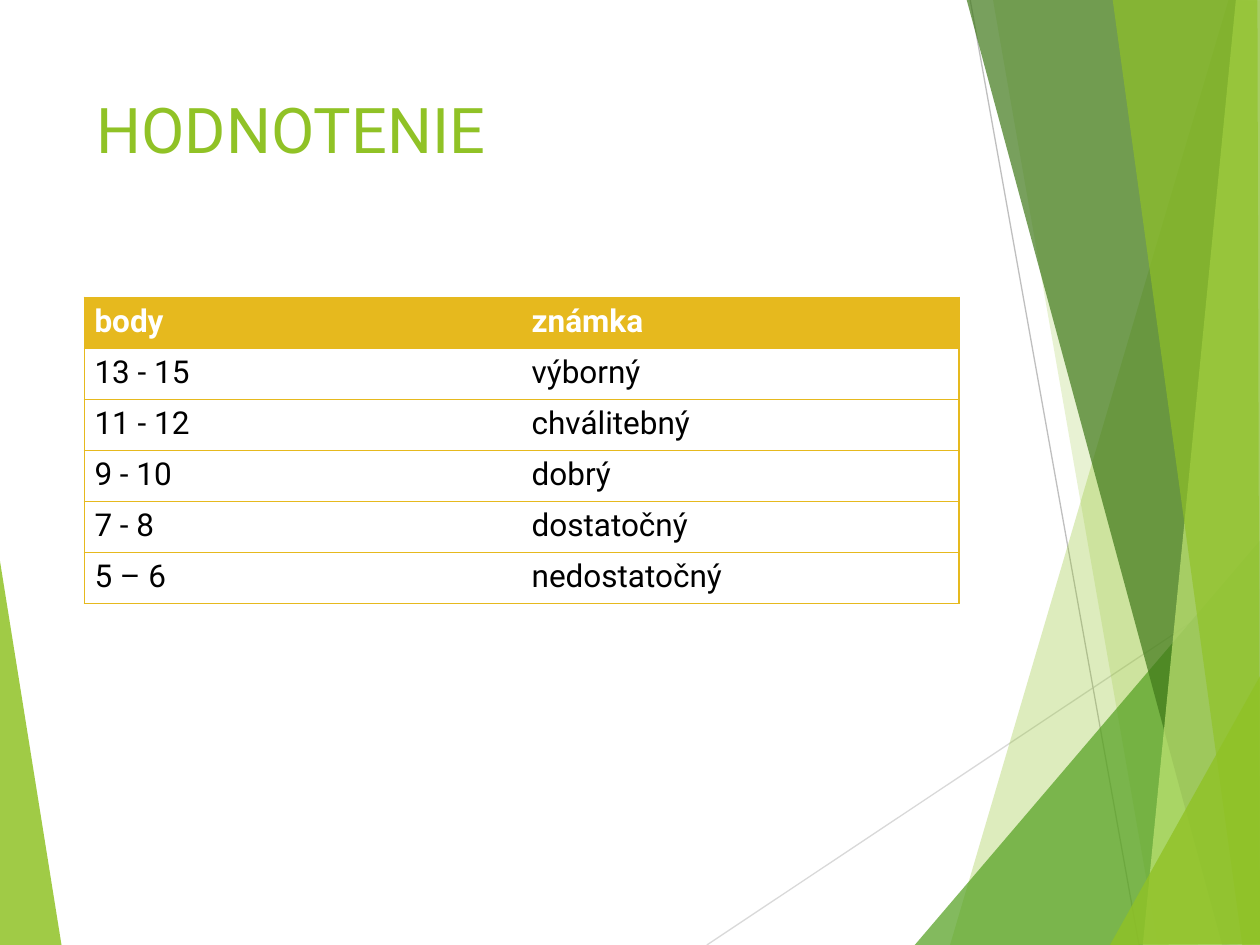
from lxml import etree
from pptx import Presentation
from pptx.dml.color import RGBColor
from pptx.enum import shapes, text
from pptx.oxml import ns
from pptx.util import Inches, Pt

LIME = RGBColor(0x90, 0xC2, 0x26)
GREEN = RGBColor(0x54, 0xA0, 0x21)
DARK = RGBColor(0x3F, 0x78, 0x19)
PALE = RGBColor(0xC0, 0xE4, 0x74)
GOLD = RGBColor(0xE6, 0xB9, 0x1E)
SILVER = RGBColor(0xD9, 0xD9, 0xD9)
GRAY = RGBColor(0xBF, 0xBF, 0xBF)
WHITE = RGBColor(0xFF, 0xFF, 0xFF)
BLACK = RGBColor(0, 0, 0)
FONT = "Roboto"


def add_facet(points, color, alpha):
    """Draw a borderless polygon; alpha is its opacity in percent."""
    start, *rest = [(Inches(x), Inches(y)) for x, y in points]
    pen = slide.shapes.build_freeform(*start, scale=1.0)
    pen.add_line_segments(rest, close=True)
    facet = pen.convert_to_shape()
    facet.shadow.inherit = False
    facet.line.fill.background()
    facet.fill.solid()
    facet.fill.fore_color.rgb = color
    tint = facet.fill._xPr.find(".//" + ns.qn("a:srgbClr"))
    etree.SubElement(tint, ns.qn("a:alpha"), val=str(alpha * 1000))


def set_borders(cell, sides):
    """Rule the named sides (of L, R, T, B) in gold and clear the others."""
    props = cell._tc.get_or_add_tcPr()
    for spot, side in enumerate("LRTB"):
        edge = etree.Element(ns.qn("a:ln" + side), w=str(Pt(1)))
        if side in sides:
            fill = etree.SubElement(edge, ns.qn("a:solidFill"))
            etree.SubElement(fill, ns.qn("a:srgbClr"), val=str(GOLD))
        else:
            etree.SubElement(edge, ns.qn("a:noFill"))
        props.insert(spot, edge)


deck = Presentation()
deck.slide_width, deck.slide_height = Inches(10), Inches(7.5)
slide = deck.slides.add_slide(deck.slide_layouts[6])

# Background facets and thin lines
add_facet([(-0.01, 4.39), (0.49, 7.51), (-0.01, 7.5)], LIME, 85)

for x1, y1, x2, y2, color in [
    (5.61, 7.5, 10.01, 4.57, SILVER),
    (7.7, 0, 9.04, 7.5, GRAY),
]:
    line = slide.shapes.add_connector(
        shapes.MSO_CONNECTOR.STRAIGHT, Inches(x1), Inches(y1), Inches(x2), Inches(y2))
    line.line.color.rgb = color
    line.line.width = Pt(0.75)
    etree.SubElement(line._element.spPr, ns.qn("a:effectLst"))

for points, color, alpha in [
    ([(9.75, 0), (7.54, 7.5), (10.02, 7.51), (10.01, 0.01)], LIME, 30),
    ([(7.88, -0.01), (9.19, 7.5), (10.01, 7.5), (10.01, -0.01)], LIME, 20),
    ([(7.26, 7.5), (10, 4.29), (10.01, 7.5)], GREEN, 72),
    ([(7.67, -0.01), (9.7, 7.5), (10.01, 7.49), (10.01, -0.01)], DARK, 70),
    ([(9.81, -0.01), (9.07, 7.5), (10.01, 7.5), (10, -0.01)], PALE, 70),
    ([(8.83, -0.01), (9.86, 7.5), (10, 7.5), (9.98, -0.01)], LIME, 65),
    ([(8.81, 7.5), (10.01, 5.35), (10.01, 7.49)], LIME, 80),
]:
    add_facet(points, color, alpha)

# Title
title = slide.shapes.add_textbox(Inches(0.67), Inches(0.67), Inches(6.94), Inches(1.44))
frame = title.text_frame
frame.word_wrap = True
frame.vertical_anchor = text.MSO_ANCHOR.TOP
frame.text = "HODNOTENIE"
font = frame.paragraphs[0].font
font.name, font.size, font.color.rgb = FONT, Pt(36), LIME

# Grading table
grades = [
    ("body", "známka"),
    ("13 - 15", "výborný"),
    ("11 - 12", "chválitebný"),
    ("9 - 10", "dobrý"),
    ("7 - 8", "dostatočný"),
    ("5 – 6", "nedostatočný"),
]
table = slide.shapes.add_table(
    len(grades), 2, Inches(0.67), Inches(2.36), Inches(6.94), Inches(2.43)).table
table.horz_banding = False
for r, grade in enumerate(grades):
    head = r == 0
    for c, label in enumerate(grade):
        cell = table.cell(r, c)
        cell.text = label
        cell.margin_left = cell.margin_right = Inches(0.08)
        cell.margin_top = cell.margin_bottom = Inches(0.05)
        if head:
            cell.fill.solid()
            cell.fill.fore_color.rgb = GOLD
        else:
            cell.fill.background()
        set_borders(cell, "LTB" if c == 0 else "RTB")
        font = cell.text_frame.paragraphs[0].font
        font.name, font.size, font.bold = FONT, Pt(18), head
        font.color.rgb = WHITE if head else BLACK

deck.save("out.pptx")
